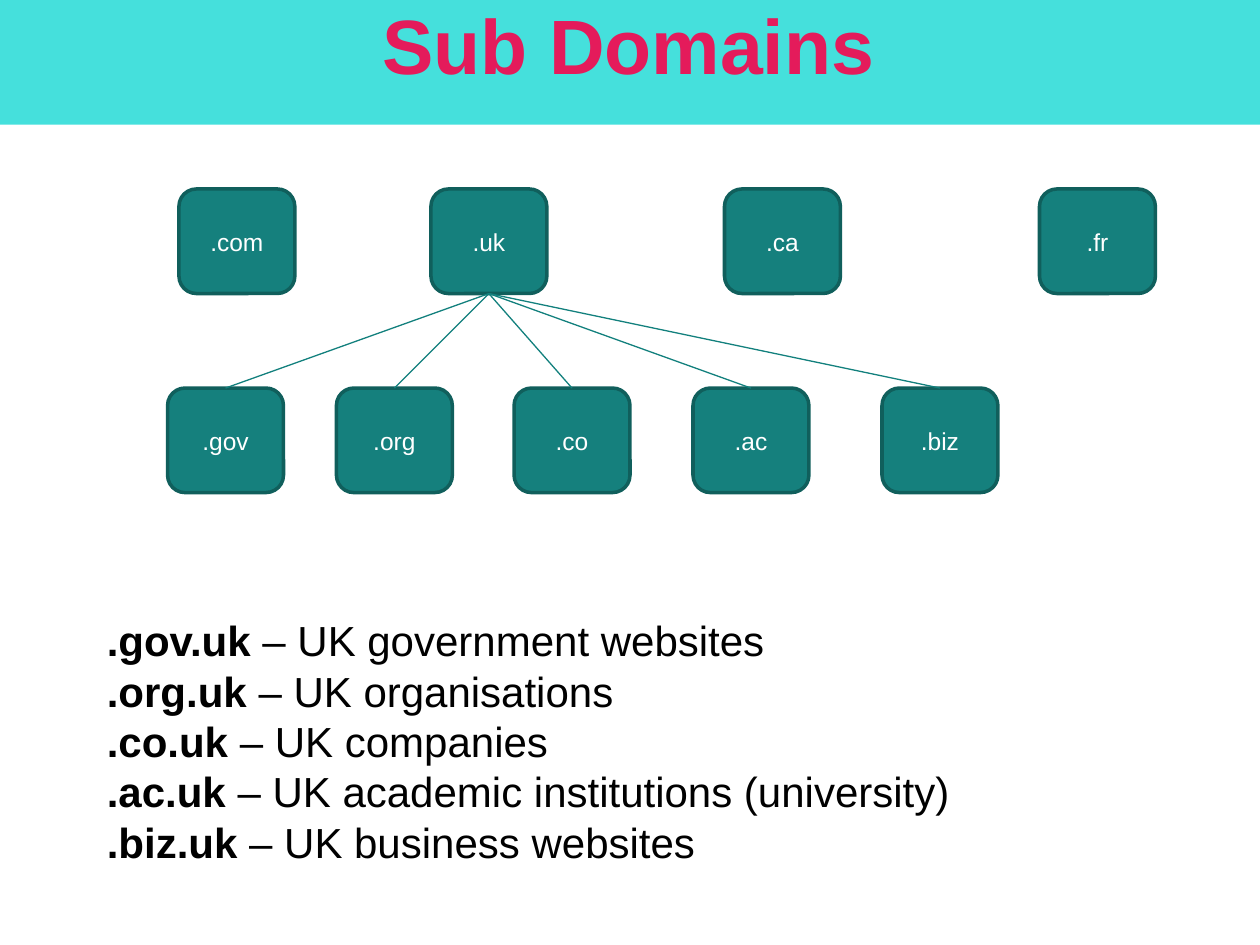
import pptx
import pptx.util
import pptx.dml.color
import pptx.enum.shapes
import pptx.enum.text
import pptx.oxml.ns
import lxml.etree

Inches, Pt = pptx.util.Inches, pptx.util.Pt
RGBColor = pptx.dml.color.RGBColor
Align, Anchor = pptx.enum.text.PP_ALIGN, pptx.enum.text.MSO_ANCHOR

TITLE = "Sub Domains"
TOP_DOMAINS = [(".com", 1.42), (".uk", 3.42), (".ca", 5.75), (".fr", 8.25)]
SUB_DOMAINS = [(".gov", 1.33), (".org", 2.67), (".co", 4.08), (".ac", 5.5), (".biz", 7)]
PARENT = ".uk"
MEANINGS = [
    "UK government websites",
    "UK organisations",
    "UK companies",
    "UK academic institutions (university)",
    "UK business websites",
]

TOP_ROW, SUB_ROW = 1.5, 3.08
BOX_WIDTH, BOX_HEIGHT = 0.92, 0.83
TOP_SITE, BOTTOM_SITE = 0, 2

FONT = "Arial"
TURQUOISE = RGBColor(0x45, 0xE0, 0xDC)
PINK = RGBColor(0xE4, 0x1B, 0x5B)
TEAL = RGBColor(0x15, 0x80, 0x7D)
DARK_TEAL = RGBColor(0x10, 0x5F, 0x5C)
LINK_TEAL = RGBColor(0x12, 0x80, 0x7D)
WHITE = RGBColor(0xFF, 0xFF, 0xFF)
BLACK = RGBColor(0, 0, 0)


def style(run, size, color, bold=False):
    run.font.name = FONT
    run.font.size = Pt(size)
    run.font.color.rgb = color
    run.font.bold = bold


def add_title(slide):
    title = slide.shapes.title
    title.left, title.top = Inches(-0.02), Inches(-0.02)
    title.width, title.height = Inches(10.02), Inches(1.01)
    title.fill.solid()
    title.fill.fore_color.rgb = TURQUOISE
    frame = title.text_frame
    frame.text = TITLE
    frame.vertical_anchor = Anchor.TOP
    frame.auto_size = pptx.enum.text.MSO_AUTO_SIZE.NONE
    frame.margin_left = frame.margin_right = frame.margin_top = frame.margin_bottom = 0
    frame.paragraphs[0].alignment = Align.CENTER
    style(frame.paragraphs[0].runs[0], 44, PINK, bold=True)


def add_domain(slide, name, left, top):
    domain = slide.shapes.add_shape(
        pptx.enum.shapes.MSO_SHAPE.ROUNDED_RECTANGLE,
        Inches(left), Inches(top), Inches(BOX_WIDTH), Inches(BOX_HEIGHT))
    domain.shadow.inherit = False
    domain.fill.solid()
    domain.fill.fore_color.rgb = TEAL
    domain.line.color.rgb = DARK_TEAL
    domain.line.width = Pt(2)
    frame = domain.text_frame
    frame.text = name
    frame.vertical_anchor = Anchor.MIDDLE
    frame.paragraphs[0].alignment = Align.CENTER
    style(frame.paragraphs[0].runs[0], 14, WHITE)
    return domain


def add_link(slide, child, parent):
    link = slide.shapes.add_connector(pptx.enum.shapes.MSO_CONNECTOR.STRAIGHT, 0, 0, 0, 0)
    link.begin_connect(child, TOP_SITE)
    link.end_connect(parent, BOTTOM_SITE)
    link.line.color.rgb = LINK_TEAL
    link.line.width = Pt(0.75)
    lxml.etree.SubElement(link._element.spPr, pptx.oxml.ns.qn("a:effectLst"))


def add_meanings(slide):
    meanings = slide.shapes.add_textbox(Inches(0.75), Inches(4.83), Inches(8.83), Inches(2.12))
    frame = meanings.text_frame
    frame.word_wrap = True
    frame.auto_size = pptx.enum.text.MSO_AUTO_SIZE.SHAPE_TO_FIT_TEXT
    for index, ((name, _), meaning) in enumerate(zip(SUB_DOMAINS, MEANINGS)):
        paragraph = frame.add_paragraph() if index else frame.paragraphs[0]
        for text, bold in ((f"{name}{PARENT} ", True), (f"– {meaning}", False)):
            run = paragraph.add_run()
            run.text = text
            style(run, 24, BLACK, bold)


def main():
    deck = pptx.Presentation()
    deck.slide_width, deck.slide_height = Inches(10), Inches(7.5)
    slide = deck.slides.add_slide(deck.slide_layouts[5])
    add_title(slide)
    top_boxes = {name: add_domain(slide, name, left, TOP_ROW) for name, left in TOP_DOMAINS}
    add_meanings(slide)
    sub_boxes = [add_domain(slide, name, left, SUB_ROW) for name, left in SUB_DOMAINS]
    for sub_box in sub_boxes:
        add_link(slide, sub_box, top_boxes[PARENT])
    deck.save("out.pptx")


if __name__ == "__main__":
    main()
